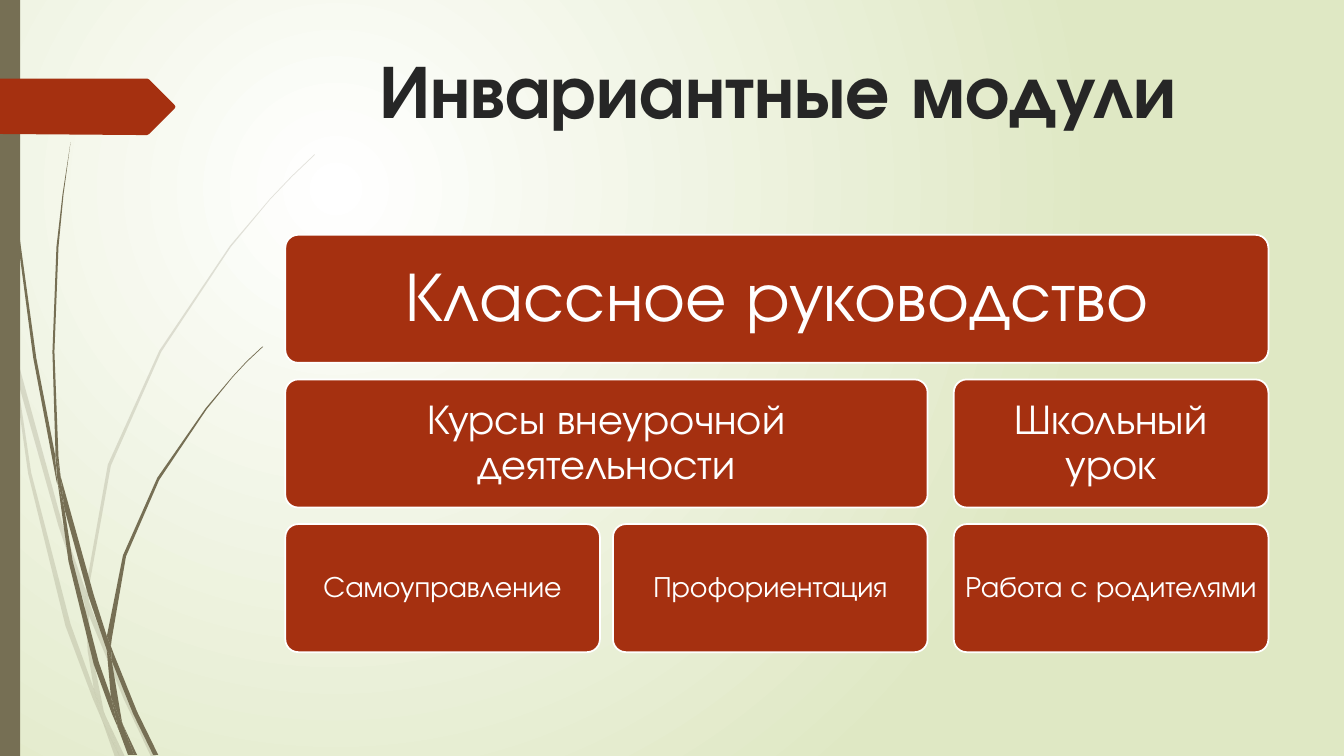
import pptx
import pptx.util
import pptx.dml.color
import pptx.enum.dml
import pptx.enum.shapes
import pptx.enum.text
import pptx.oxml
import pptx.oxml.ns
from pptx.util import Inches

FONT = "TeX Gyre Adventor"
COLORS = {
    "rust": "A53010",
    "olive": "766F54",
    "white": "FFFFFF",
    "pale_green": "DFE8C4",
    "title": "262626",
}

# Outlines are in hundredths of an inch.
PALE_GRASS = [
    [(11, 350), (9, 322), (0, 282), (0, 299), (10, 344)],
    [(58, 522), (84, 599), (85, 586), (62, 520), (14, 345), (17, 376)],
    [(92, 607), (88, 596), (88, 610), (123, 694), (150, 751), (155, 751), (127, 692)],
    [(119, 751), (124, 751), (105, 711)],
    [(93, 683), (70, 619), (31, 469), (17, 376), (11, 350), (28, 470), (65, 621),
     (92, 693), (101, 714), (99, 707)],
    [(84, 599), (87, 646), (93, 683), (96, 692), (105, 711), (103, 706), (91, 646),
     (88, 610), (88, 608)],
    [(88, 584), (110, 462), (160, 349), (229, 245), (268, 198), (290, 175), (312, 154),
     (312, 153), (289, 175), (268, 197), (228, 244), (158, 348), (107, 461), (85, 584),
     (85, 586), (88, 596)],
    [(101, 714), (114, 751), (119, 751)],
    [(88, 608), (88, 610), (88, 596), (85, 586), (84, 599)],
    [(96, 692), (93, 683), (99, 707), (101, 714), (119, 751), (105, 711)],
]
DARK_GRASS = [
    [(7, 110), (17, 233), (33, 355), (56, 477), (57, 481), (55, 457), (55, 453),
     (36, 355), (19, 232), (8, 109), (5, 48), (4, 0), (3, 0), (4, 48)],
    [(88, 592), (106, 645), (106, 633), (106, 631), (93, 590), (60, 472), (64, 505)],
    [(113, 649), (110, 641), (111, 656), (132, 708), (152, 749), (157, 749), (136, 706)],
    [(110, 691), (98, 657), (72, 556), (64, 505), (57, 477), (68, 557), (93, 659),
     (111, 708), (117, 722), (116, 717)],
    [(60, 472), (58, 453), (54, 349), (58, 245), (63, 193), (70, 141), (62, 193),
     (56, 245), (52, 349), (55, 449)],
    [(133, 749), (136, 749), (122, 719)],
    [(57, 477), (64, 505), (60, 472), (55, 449), (55, 453)],
    [(111, 633), (125, 552), (158, 476), (205, 406), (231, 374), (245, 359), (261, 344),
     (260, 344), (245, 358), (231, 373), (204, 405), (156, 474), (122, 551), (106, 631),
     (110, 641)],
    [(117, 722), (127, 749), (131, 749)],
    [(106, 645), (110, 691), (116, 706), (122, 719), (121, 716), (111, 656), (109, 651)],
    [(106, 645), (109, 651), (111, 656), (110, 641), (106, 631), (106, 633)],
    [(116, 706), (110, 691), (116, 717), (117, 722), (130, 749), (133, 749), (122, 719)],
]
ARROW_TAB = [(173, 108), (148, 133), (146, 134), (136, 134), (0, 133), (0, 78),
             (146, 78), (148, 79), (173, 104), (174, 106)]

COLUMN_WIDTH = 3.12
COLUMN_LEFTS = (2.83, 6.08, 9.46)
ROW_TOP, ROW_PITCH, ROW_HEIGHT = 2.33, 1.435, 1.27
ROWS = [
    (50, 0.17, [("Классное руководство", 0, 2)]),
    (30, 0.08, [("Курсы внеурочной деятельности", 0, 1), ("Школьный урок", 2, 2)]),
    (21, 0.05, [("Самоуправление", 0, 0), ("Профориентация", 1, 1),
                ("Работа с родителями", 2, 2)]),
]


def rgb(name):
    return pptx.dml.color.RGBColor.from_string(COLORS[name])


def paint(shape, color):
    shape.shadow.inherit = False
    shape.fill.solid()
    shape.fill.fore_color.rgb = rgb(color)
    shape.line.fill.background()


def set_background(slide):
    fill = slide.background.fill
    fill.gradient()
    for stop, position, color in zip(fill.gradient_stops, (0, 1), ("white", "pale_green")):
        stop.position = position
        stop.color.rgb = rgb(color)
    gradient = slide.element.find(".//" + pptx.oxml.ns.qn("a:gradFill"))
    linear = gradient.find(pptx.oxml.ns.qn("a:lin"))
    circle = pptx.oxml.parse_xml(
        f'<a:path {pptx.oxml.ns.nsdecls("a")} path="circle">'
        '<a:fillToRect l="50000" t="50000" r="100000" b="100000"/></a:path>'
    )
    gradient.replace(linear, circle)


def add_outline(shapes, points, color, opacity=100):
    builder = shapes.build_freeform(*points[0], scale=Inches(0.01))
    builder.add_line_segments(points[1:], close=True)
    shape = builder.convert_to_shape()
    paint(shape, color)
    if opacity < 100:
        tint = shape.fill._xPr.find(".//" + pptx.oxml.ns.qn("a:srgbClr"))
        alpha = pptx.oxml.parse_xml(
            f'<a:alpha {pptx.oxml.ns.nsdecls("a")} val="{opacity * 1000}"/>'
        )
        tint.append(alpha)


def add_grass(slide, blades, opacity=100):
    group = slide.shapes.add_group_shape()
    for blade in blades:
        add_outline(group.shapes, blade, "olive", opacity)


def add_side_bar(slide):
    bar = slide.shapes.add_shape(
        pptx.enum.shapes.MSO_SHAPE.RECTANGLE, 0, 0, Inches(0.2), Inches(7.5)
    )
    paint(bar, "olive")


def write_text(shape, text, size, color, bold=False):
    frame = shape.text_frame
    frame.word_wrap = True
    frame.text = text
    paragraph = frame.paragraphs[0]
    paragraph.alignment = pptx.enum.text.PP_ALIGN.CENTER
    font = paragraph.runs[0].font
    font.name, font.size, font.bold = FONT, pptx.util.Pt(size), bold
    font.color.rgb = rgb(color)


def add_title(slide):
    title = slide.shapes.add_textbox(Inches(2.84), Inches(0.38), Inches(9.75), Inches(1.17))
    write_text(title, "Инвариантные модули", 54, "title", bold=True)


def add_module(shapes, text, left, top, width, size, inset):
    module = shapes.add_shape(
        pptx.enum.shapes.MSO_SHAPE.ROUNDED_RECTANGLE,
        Inches(left), Inches(top), Inches(width), Inches(ROW_HEIGHT),
    )
    module.adjustments[0] = 0.1
    paint(module, "rust")
    module.line.color.rgb = rgb("white")
    module.line.width = pptx.util.Pt(1.25)
    write_text(module, text, size, "white")
    frame = module.text_frame
    frame.vertical_anchor = pptx.enum.text.MSO_ANCHOR.MIDDLE
    frame.margin_left = frame.margin_right = Inches(inset)
    frame.margin_top = frame.margin_bottom = Inches(inset)
    frame.paragraphs[0].line_spacing = 0.9


def add_modules(slide):
    group = slide.shapes.add_group_shape()
    for row, (size, inset, modules) in enumerate(ROWS):
        top = ROW_TOP + row * ROW_PITCH
        for text, first, last in modules:
            left = COLUMN_LEFTS[first]
            width = COLUMN_LEFTS[last] + COLUMN_WIDTH - left
            add_module(group.shapes, text, left, top, width, size, inset)


def main():
    presentation = pptx.Presentation()
    presentation.slide_width = Inches(13.33)
    presentation.slide_height = Inches(7.5)
    slide = presentation.slides.add_slide(presentation.slide_layouts[6])
    set_background(slide)
    add_grass(slide, PALE_GRASS, opacity=20)
    add_grass(slide, DARK_GRASS)
    add_side_bar(slide)
    add_outline(slide.shapes, ARROW_TAB, "rust")
    add_title(slide)
    add_modules(slide)
    presentation.save("out.pptx")


if __name__ == "__main__":
    main()
